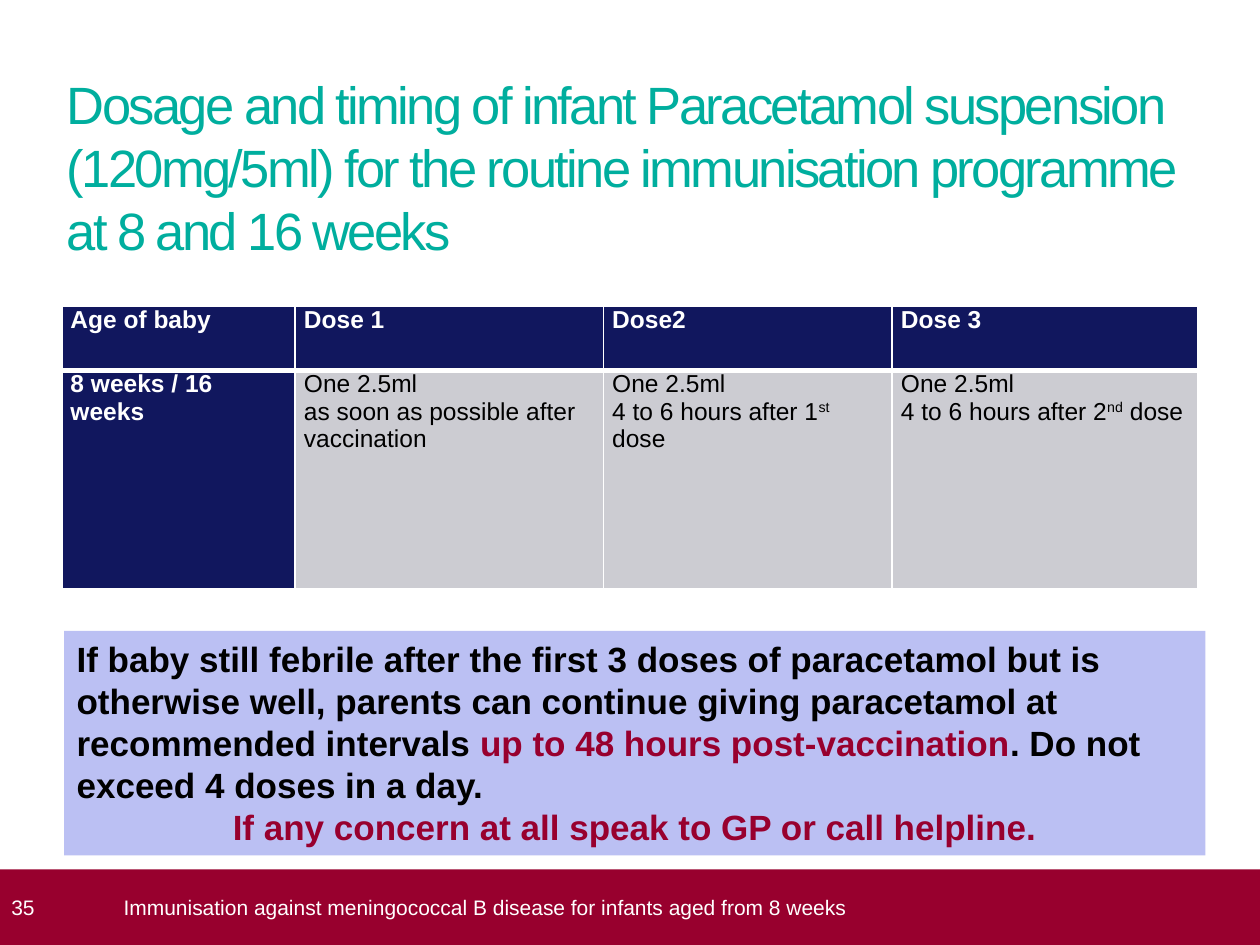
"""Builds the slide on infant paracetamol dosage and timing."""
import pptx
import pptx.util
import pptx.dml.color
import pptx.enum.shapes
import pptx.enum.text
import pptx.oxml
import pptx.oxml.ns

Pt = pptx.util.Pt
ALIGN = pptx.enum.text.PP_ALIGN
ANCHOR = pptx.enum.text.MSO_ANCHOR
WHITE, BLACK, RED, TEAL = "FFFFFF", "000000", "98002E", "00AE9E"
NAVY, GREY, LILAC = "11175E", "CCCCD2", "BBC0F3"


def color(value):
    return pptx.dml.color.RGBColor.from_string(value)


def paint(target, value):
    target.fill.solid()
    target.fill.fore_color.rgb = color(value)


def write(para, text, size=12, ink=BLACK, bold=False, raised=0, tracking=0):
    span = para.add_run()
    span.text = text
    font = span.font
    font.name, font.size, font.bold = "Arial", Pt(size), bold
    font.color.rgb = color(ink)
    properties = font._element
    if raised:
        properties.set("baseline", str(raised * 1000))
    if tracking:
        properties.set("spc", str(int(tracking * 100)))


def fill_frame(frame, paragraphs, anchor=ANCHOR.TOP, margins=(7.2, 3.6, 7.2, 3.6),
               aligns=(), leading=None, **style):
    frame.word_wrap = True
    frame.vertical_anchor = anchor
    (frame.margin_left, frame.margin_top,
     frame.margin_right, frame.margin_bottom) = map(Pt, margins)
    for index, spans in enumerate(paragraphs):
        para = frame.add_paragraph() if index else frame.paragraphs[0]
        para.alignment = aligns[index] if aligns else ALIGN.LEFT
        if leading:
            para.line_spacing = Pt(leading)
        for text, changes in spans:
            write(para, text, **{**style, **changes})


def plain(*lines):
    return [[(line, {})] for line in lines]


class Slide:
    def __init__(self, deck):
        self.page = deck.slides.add_slide(deck.slide_layouts[5])

    def title(self, area, text, **style):
        box = self.page.shapes.title
        box.left, box.top, box.width, box.height = map(Pt, area)
        fill_frame(box.text_frame, plain(text), **style)

    def panel(self, area, fill, paragraphs, **style):
        box = self.page.shapes.add_shape(
            pptx.enum.shapes.MSO_SHAPE.RECTANGLE, *map(Pt, area))
        box.shadow.inherit = False
        box.line.fill.background()
        paint(box, fill)
        fill_frame(box.text_frame, paragraphs, **style)

    def text(self, area, text, **style):
        box = self.page.shapes.add_textbox(*map(Pt, area))
        fill_frame(box.text_frame, plain(text), **style)

    def table(self, area, widths, heights, rows, size):
        grid = self.page.shapes.add_table(len(rows), len(widths), *map(Pt, area)).table
        for column, width in zip(grid.columns, widths):
            column.width = Pt(width)
        for row, height in zip(grid.rows, heights):
            row.height = Pt(height)
        for row, contents in enumerate(rows):
            for column, paragraphs in enumerate(contents):
                heading = row == 0 or column == 0
                cell = grid.cell(row, column)
                self.borders(cell, L=1, R=1, T=3 if row else 1, B=1 if row else 3)
                paint(cell, NAVY if heading else GREY)
                cell.margin_left = cell.margin_right = Pt(5)
                cell.margin_top = cell.margin_bottom = 0
                fill_frame(cell.text_frame, paragraphs, margins=(5, 0, 5, 0),
                           size=size, bold=heading, ink=WHITE if heading else BLACK)

    def borders(self, cell, **widths):
        properties = cell._tc.get_or_add_tcPr()
        for side, width in widths.items():
            properties.append(pptx.oxml.parse_xml(
                f'<a:ln{side} {pptx.oxml.ns.nsdecls("a")} w="{Pt(width)}"><a:solidFill>'
                f'<a:srgbClr val="{WHITE}"/></a:solidFill></a:ln{side}>'))


def later_dose(number, suffix):
    return plain("One 2.5ml") + [[(f"4 to 6 hours after {number}", {}),
                                  (suffix, {"raised": 30}), (" dose", {})]]


def main():
    deck = pptx.Presentation()
    deck.slide_width, deck.slide_height = Pt(720), Pt(540)
    slide = Slide(deck)
    slide.panel((0, 496.8, 720, 43.2), RED, plain("35"), anchor=ANCHOR.MIDDLE,
                margins=(6.5, 0, 7.2, 0), ink=WHITE)
    slide.text((70.6, 496.8, 635, 43.2),
               "Immunisation against meningococcal B disease for infants aged from 8 weeks",
               anchor=ANCHOR.MIDDLE, margins=(0, 0, 0, 0), ink=WHITE)
    slide.table((35.3, 175.2, 649, 161), (133.4, 176.2, 165, 174.4), (36.5, 124.5), [
        [plain(head) for head in ("Age of baby", "Dose 1", "Dose2", "Dose 3")],
        [plain("8 weeks / 16 weeks"),
         plain("One 2.5ml", "as soon as possible after vaccination"),
         later_dose(1, "st"), later_dose(2, "nd")]], size=14)
    slide.title((31, 37.4, 663, 116.6),
                "Dosage and timing of infant Paracetamol suspension (120mg/5ml) "
                "for the routine immunisation programme at 8 and 16 weeks",
                size=30, ink=TEAL, tracking=-1.5, leading=36)
    slide.panel((36.7, 360.6, 652.2, 128.3), LILAC, [
        [("If baby still febrile after the first 3 doses of paracetamol but is otherwise "
          "well, parents can continue giving paracetamol at recommended intervals ", {}),
         ("up to 48 hours post-vaccination", {"ink": RED}),
         (". Do not exceed 4 doses in a day.", {})],
        [("If any concern at all speak to GP or call helpline.", {"ink": RED})]],
        aligns=(ALIGN.LEFT, ALIGN.CENTER), size=20, bold=True, leading=24)
    deck.save("out.pptx")


if __name__ == "__main__":
    main()
